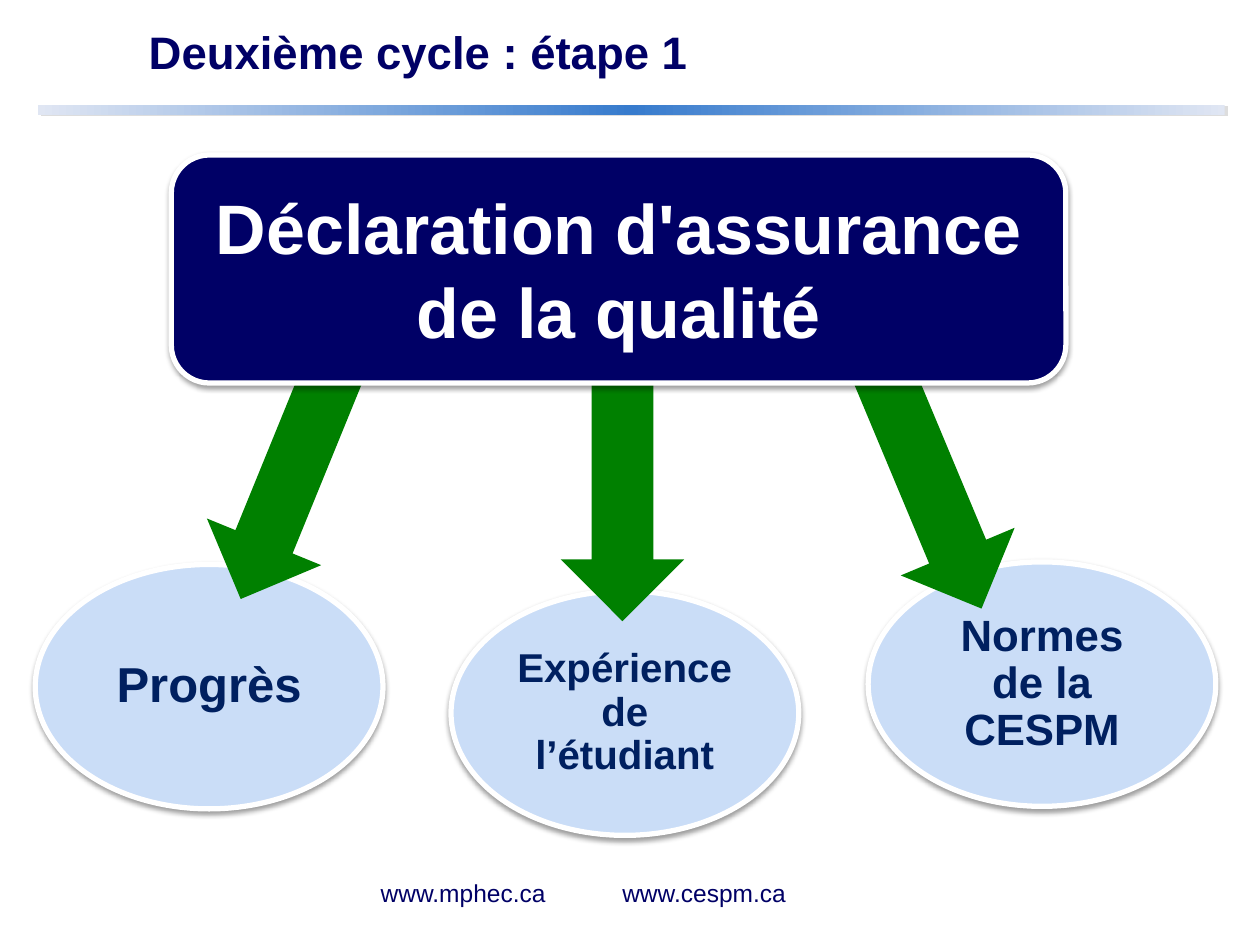
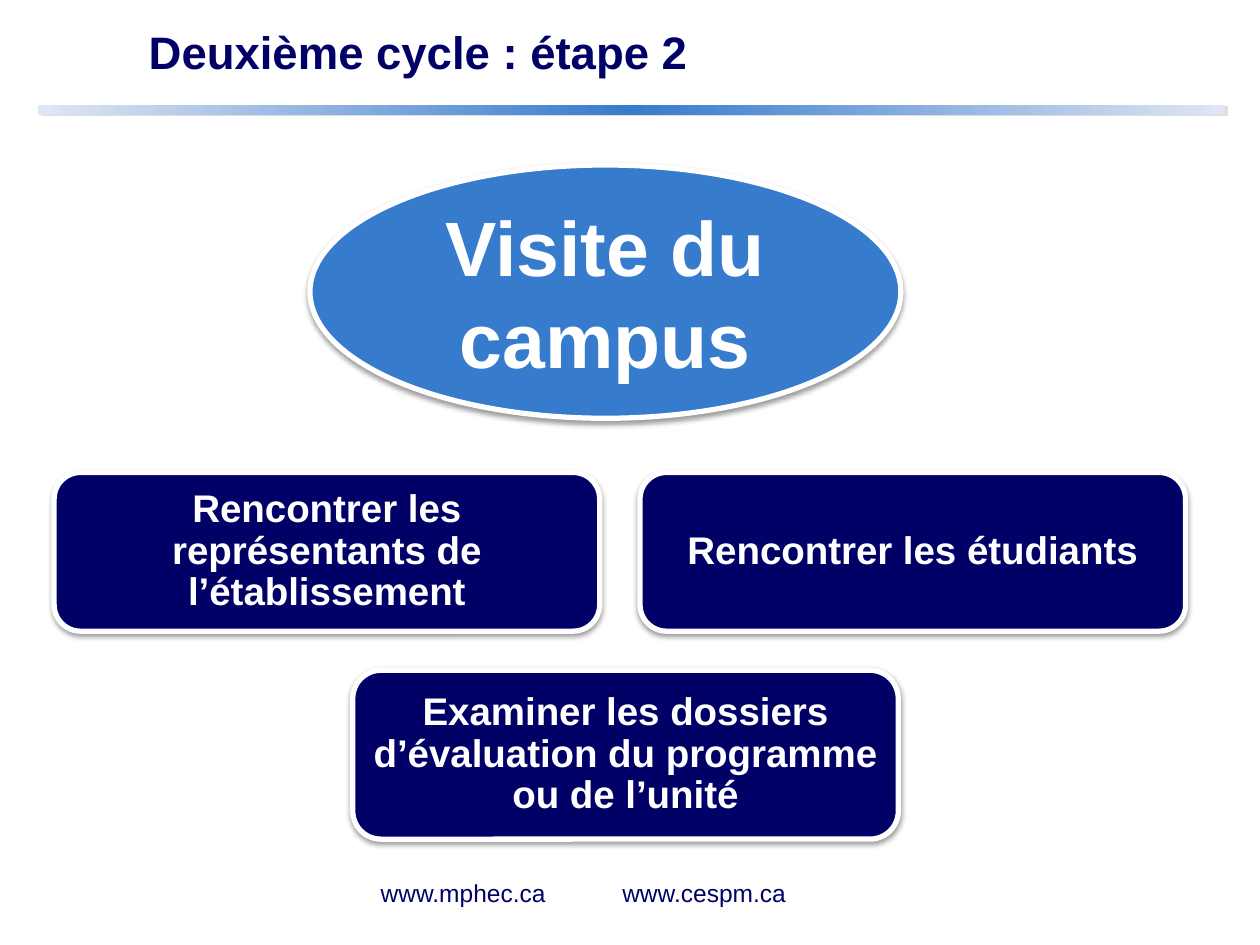
import copy
from dataclasses import dataclass

import pptx
import pptx.dml.color
import pptx.enum.shapes
import pptx.enum.text
import pptx.oxml
import pptx.oxml.ns
import pptx.util
from pptx.presentation import Presentation
from pptx.shapes.autoshape import Shape
from pptx.slide import Slide
from pptx.text.text import TextFrame

RGBColor = pptx.dml.color.RGBColor
ShapeKind = pptx.enum.shapes.MSO_SHAPE
Align = pptx.enum.text.PP_ALIGN

EMU_PER_PX = 9144  # 100 px to the inch
FONT = "Arial"
TITLE_ONLY_LAYOUT = 5

WHITE = RGBColor(0xFF, 0xFF, 0xFF)
NAVY = RGBColor(0x00, 0x00, 0x66)
DARK_BLUE = RGBColor(0x00, 0x20, 0x60)
BLUE = RGBColor(0x37, 0x7B, 0xCD)
PALE_BLUE = RGBColor(0xCA, 0xDD, 0xF7)
BAND_EDGE = RGBColor(0xE0, 0xE6, 0xF3)
BAND_SHADOW = RGBColor(0xDD, 0xDD, 0xDD)
BLACK = RGBColor(0x00, 0x00, 0x00)
GREEN = RGBColor(0x00, 0x80, 0x00)


@dataclass(frozen=True)
class Box:
    left: int
    top: int
    width: int
    height: int

    def emu(self) -> list[pptx.util.Emu]:
        return [px(n) for n in (self.left, self.top, self.width, self.height)]


@dataclass(frozen=True)
class TextStyle:
    size: int
    color: RGBColor
    bold: bool = True
    align: Align = Align.CENTER
    line_spacing: float = 0.9


@dataclass(frozen=True)
class Shadow:
    color: RGBColor
    opacity: int
    blur: float
    distance: float
    angle: int


@dataclass(frozen=True)
class Bubble:
    """A white-rimmed shape holding a label."""
    text: str
    box: Box
    kind: ShapeKind
    fill: RGBColor
    style: TextStyle


@dataclass(frozen=True)
class Arrow:
    box: Box
    rotation: float = 0


BUBBLE_SHADOW = Shadow(BLACK, 38, 3.1, 1.6, 90)
LINE_SHADOW = Shadow(BAND_SHADOW, 100, 0, 2.2, 27)
TITLE_STYLE = TextStyle(26, NAVY, align=Align.LEFT)
PILL_STYLE = TextStyle(22, WHITE)

BAND = Box(30, 83, 942, 8)
TITLE = Box(108, 3, 863, 81)
FOOTERS = [
    ("www.mphec.ca", Box(244, 692, 199, 34), Align.RIGHT),
    ("www.cespm.ca", Box(484, 692, 199, 34), Align.LEFT),
]


def px(length: int) -> pptx.util.Emu:
    return pptx.util.Emu(length * EMU_PER_PX)


def write(frame: TextFrame, text: str, style: TextStyle,
          anchor=pptx.enum.text.MSO_ANCHOR.MIDDLE) -> None:
    frame.word_wrap = True
    frame.auto_size = pptx.enum.text.MSO_AUTO_SIZE.NONE
    frame.vertical_anchor = anchor
    frame.text = text
    paragraph = frame.paragraphs[0]
    paragraph.alignment = style.align
    paragraph.line_spacing = style.line_spacing
    paragraph.space_before = pptx.util.Pt(0)
    font = paragraph.font
    font.name = FONT
    font.size = pptx.util.Pt(style.size)
    font.bold = style.bold
    font.color.rgb = style.color


def cast_shadow(shape: Shape, shadow: Shadow) -> None:
    effects = shape._element.spPr.find(pptx.oxml.ns.qn("a:effectLst"))
    effects.append(pptx.oxml.parse_xml(
        f'<a:outerShdw {pptx.oxml.ns.nsdecls("a")}'
        f' blurRad="{pptx.util.Pt(shadow.blur)}" dist="{pptx.util.Pt(shadow.distance)}"'
        f' dir="{shadow.angle * 60000}" algn="ctr" rotWithShape="0">'
        f'<a:srgbClr val="{shadow.color}"><a:alpha val="{shadow.opacity * 1000}"/>'
        '</a:srgbClr></a:outerShdw>'))


def add_plain_shape(slide: Slide, kind: ShapeKind, box: Box, fill: RGBColor) -> Shape:
    shape = slide.shapes.add_shape(kind, *box.emu())
    shape.shadow.inherit = False
    shape.fill.solid()
    shape.fill.fore_color.rgb = fill
    shape.line.fill.background()
    return shape


def add_band(slide: Slide) -> None:
    band = add_plain_shape(slide, ShapeKind.RECTANGLE, BAND, BLUE)
    band.fill.gradient()
    band.fill.gradient_angle = 0
    stop_list = band._element.spPr.find(".//" + pptx.oxml.ns.qn("a:gsLst"))
    stop_list.append(copy.deepcopy(stop_list[0]))
    colors = (BAND_EDGE, BLUE, BAND_EDGE)
    for index, (stop, color) in enumerate(zip(band.fill.gradient_stops, colors)):
        stop.position = index / 2
        stop.color.rgb = color
    cast_shadow(band, LINE_SHADOW)


def add_bubble(slide: Slide, bubble: Bubble) -> None:
    shape = add_plain_shape(slide, bubble.kind, bubble.box, bubble.fill)
    shape.line.color.rgb = WHITE
    shape.line.width = pptx.util.Pt(3)
    cast_shadow(shape, BUBBLE_SHADOW)
    write(shape.text_frame, bubble.text, bubble.style)
    if bubble.kind == ShapeKind.ROUNDED_RECTANGLE:
        shape.text_frame.margin_left = shape.text_frame.margin_right = px(5)


def add_arrow(slide: Slide, arrow: Arrow) -> None:
    shape = add_plain_shape(slide, ShapeKind.DOWN_ARROW, arrow.box, GREEN)
    shape.rotation = arrow.rotation


def add_titled_slide(presentation: Presentation, title_text: str) -> Slide:
    slide = presentation.slides.add_slide(presentation.slide_layouts[TITLE_ONLY_LAYOUT])
    title = slide.shapes.title
    title.left, title.top, title.width, title.height = TITLE.emu()
    write(title.text_frame, title_text, TITLE_STYLE)
    add_band(slide)
    for address, box, align in FOOTERS:
        footer = slide.shapes.add_textbox(*box.emu())
        write(footer.text_frame, address, TextStyle(14, NAVY, False, align, 1.0),
              pptx.enum.text.MSO_ANCHOR.TOP)
    return slide


def build_declaration_slide(presentation: Presentation) -> None:
    slide = add_titled_slide(presentation, "Deuxième cycle : étape 1")
    topics = [
        ("Progrès", 28, 448, 28),
        ("Expérience de l’étudiant", 358, 469, 23),
        ("Normes de la CESPM", 689, 446, 25),
    ]
    for text, left, top, size in topics:
        add_bubble(slide, Bubble(text, Box(left, top, 276, 194), ShapeKind.OVAL,
                                 PALE_BLUE, TextStyle(size, DARK_BLUE)))
    arrows = [
        Arrow(Box(191, 226, 98, 259), 22.2),
        Arrow(Box(445, 249, 98, 244)),
        Arrow(Box(680, 234, 98, 259), 337.3),
    ]
    for arrow in arrows:
        add_arrow(slide, arrow)
    add_bubble(slide, Bubble("Déclaration d'assurance de la qualité",
                             Box(136, 123, 710, 181), ShapeKind.ROUNDED_RECTANGLE,
                             NAVY, TextStyle(40, WHITE, line_spacing=1.0)))


def build_visit_slide(presentation: Presentation) -> None:
    slide = add_titled_slide(presentation, "Deuxième cycle : étape 2")
    add_bubble(slide, Bubble("Visite du campus", Box(246, 131, 469, 201), ShapeKind.OVAL,
                             BLUE, TextStyle(44, WHITE, line_spacing=1.0)))
    tasks = [
        ("Rencontrer les représentants de l’établissement", Box(43, 375, 433, 126)),
        ("Rencontrer les étudiants", Box(508, 375, 433, 126)),
        ("Examiner les dossiers d’évaluation du programme ou de l’unité",
         Box(280, 532, 433, 134)),
    ]
    for text, box in tasks:
        add_bubble(slide, Bubble(text, box, ShapeKind.ROUNDED_RECTANGLE, NAVY, PILL_STYLE))


def main() -> None:
    presentation = pptx.Presentation()
    presentation.slide_width, presentation.slide_height = px(1000), px(750)
    build_declaration_slide(presentation)
    build_visit_slide(presentation)
    presentation.save("out.pptx")


if __name__ == "__main__":
    main()
